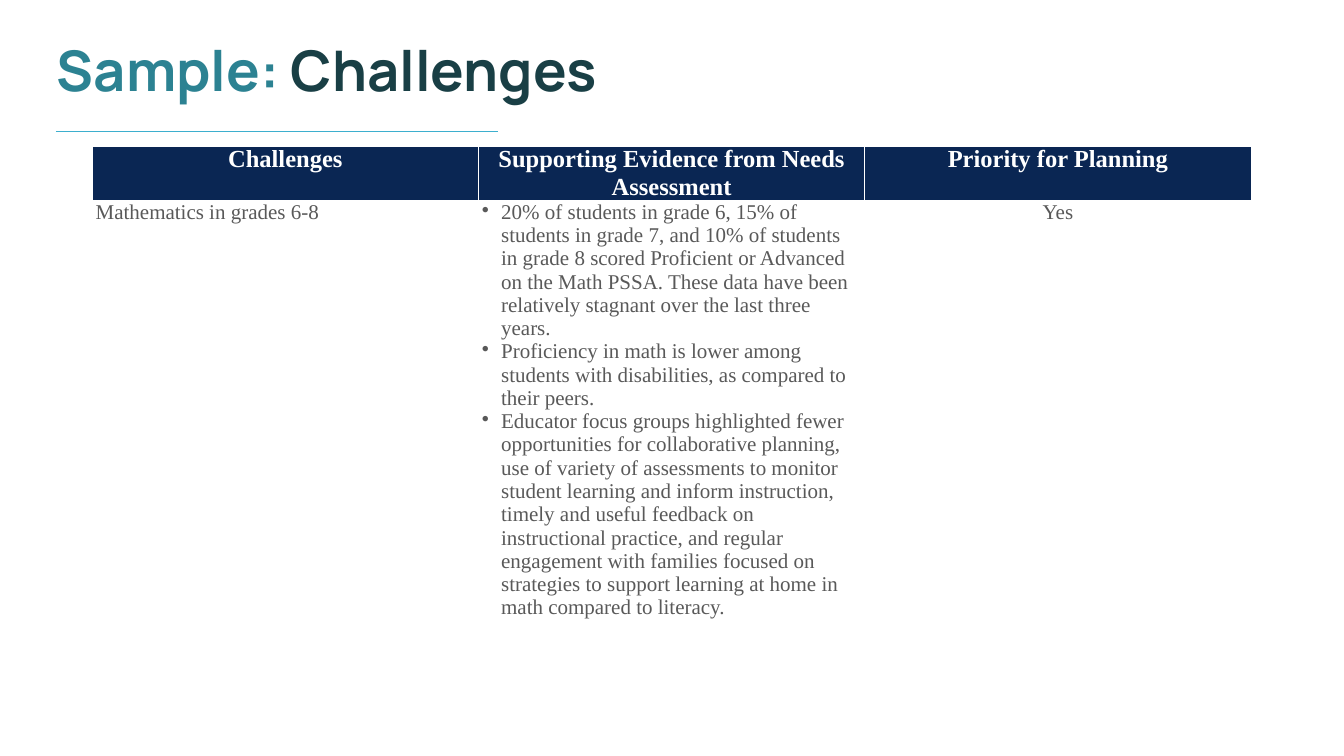
from dataclasses import dataclass

from lxml import etree
from pptx import Presentation, util as u
from pptx.dml.color import RGBColor
from pptx.enum import shapes, text
from pptx.oxml import ns


@dataclass(frozen=True)
class Theme:
    """Colours, fonts and type sizes of the deck."""
    teal: str = "2C8292"
    pine: str = "193F45"
    navy: str = "0A2653"
    grey: str = "595959"
    white: str = "FFFFFF"
    rule: str = "3DAFCE"
    head: str = "Manrope"
    body: str = "Times New Roman"
    big: int = 80
    mid: int = 35
    small: int = 30


def tag(root, name, **attrs):
    """Append a DrawingML element."""
    return etree.SubElement(root, ns.qn(f"a:{name}"), attrs)


class Deck:
    """Draws on one slide, with lengths in hundredths of its width and height."""

    def __init__(self, theme):
        """Open a title-only slide."""
        self.theme = theme
        self.prs = Presentation()
        self.prs.slide_width = u.Inches(26.66)
        self.prs.slide_height = u.Inches(15)
        self.slide = self.prs.slides.add_slide(self.prs.slide_layouts[5])

    def x(self, share):
        """Turn a share of the width into a length."""
        return round(self.prs.slide_width * share / 100)

    def y(self, share):
        """Turn a share of the height into a length."""
        return round(self.prs.slide_height * share / 100)

    def run(self, para, words, face, size, hue, bold=False):
        """Add one styled run."""
        run = para.add_run()
        run.text = words
        font = run.font
        font.name, font.size, font.bold = face, u.Pt(size), bold
        font.color.rgb = RGBColor.from_string(hue)

    def title(self, left, top, width, height, parts):
        """Place the title and fill it with coloured parts."""
        box = self.slide.shapes.title
        box.left, box.top = self.x(left), self.y(top)
        box.width, box.height = self.x(width), self.y(height)
        frame = box.text_frame
        frame.auto_size = text.MSO_AUTO_SIZE.NONE
        frame.word_wrap = True
        frame.vertical_anchor = text.MSO_ANCHOR.MIDDLE
        frame.margin_left = frame.margin_right = u.Inches(0.2)
        frame.margin_top = frame.margin_bottom = u.Inches(0.1)
        para = frame.paragraphs[0]
        para.alignment = text.PP_ALIGN.LEFT
        para.line_spacing = 0.9
        for words, hue in parts:
            self.run(para, words, self.theme.head, self.theme.big, hue, True)

    def edges(self, cell, base):
        """Draw white cell borders with a given bottom weight."""
        props = cell._tc.get_or_add_tcPr()
        for side, wide in zip("LRTB", (1, 1, 1, base)):
            line = tag(props, f"ln{side}", w=str(u.Pt(wide)))
            tag(tag(line, "solidFill"), "srgbClr", val=self.theme.white)

    def bullet(self, para):
        """Give a paragraph a hanging bullet."""
        props = para._p.get_or_add_pPr()
        hang = u.Inches(0.38)
        props.set("marL", str(hang))
        props.set("indent", str(-hang))
        tag(props, "buChar", char="•")

    def cell(self, cell, lines, top, mid):
        """Style and fill one table cell."""
        t = self.theme
        self.edges(cell, 3 if top else 1)
        cell.margin_left = cell.margin_right = u.Inches(0.07)
        cell.margin_top = cell.margin_bottom = 0
        if top:
            cell.fill.solid()
            cell.fill.fore_color.rgb = RGBColor.from_string(t.navy)
        else:
            cell.fill.background()
        size, hue = (t.mid, t.white) if top else (t.small, t.grey)
        frame = cell.text_frame
        for i, words in enumerate(lines):
            para = frame.add_paragraph() if i else frame.paragraphs[0]
            para.alignment = text.PP_ALIGN.CENTER if mid else text.PP_ALIGN.LEFT
            if len(lines) > 1:
                self.bullet(para)
            self.run(para, words, t.body, size, hue, top)

    def table(self, left, top, width, height, step, rows):
        """Add a table with equal columns whose rows grow with their text."""
        count = len(rows[0])
        frame = self.slide.shapes.add_table(
            len(rows), count, self.x(left), self.y(top), self.x(width), self.y(height))
        grid = frame.table
        grid.horz_banding = False
        for r, row in enumerate(rows):
            grid.rows[r].height = self.y(step)
            for c, lines in enumerate(row):
                self.cell(grid.cell(r, c), lines, r == 0, r == 0 or c == count - 1)
        frame.height = self.y(height)

    def rule(self, left, right, top):
        """Draw a thin level line."""
        line = self.slide.shapes.add_connector(
            shapes.MSO_CONNECTOR.STRAIGHT,
            self.x(left), self.y(top), self.x(right), self.y(top))
        line.line.color.rgb = RGBColor.from_string(self.theme.rule)
        line.line.width = u.Pt(1)
        tag(line._element.spPr, "effectLst")


def main():
    """Build the slide on sample challenges."""
    t = Theme()
    deck = Deck(t)
    deck.title(3.49, 0, 86.23, 19.33, [("Sample:", t.teal), (" Challenges", t.pine)])
    deck.table(6.86, 19.33, 86.23, 67.8, 2.73, [
        [["Challenges"],
         ["Supporting Evidence from Needs Assessment"],
         ["Priority for Planning"]],
        [["Mathematics in grades 6-8"],
         ["20% of students in grade 6, 15% of students in grade 7, and 10% of "
          "students in grade 8 scored Proficient or Advanced on the Math PSSA. "
          "These data have been relatively stagnant over the last three years.",
          "Proficiency in math is lower among students with disabilities, as "
          "compared to their peers.",
          "Educator focus groups highlighted fewer opportunities for collaborative "
          "planning, use of variety of assessments to monitor student learning and "
          "inform instruction, timely and useful feedback on instructional practice, "
          "and regular engagement with families focused on strategies to support "
          "learning at home in math compared to literacy."],
         ["Yes"]],
    ])
    deck.rule(4.16, 37.06, 17.33)
    deck.prs.save("out.pptx")


if __name__ == "__main__":
    main()
